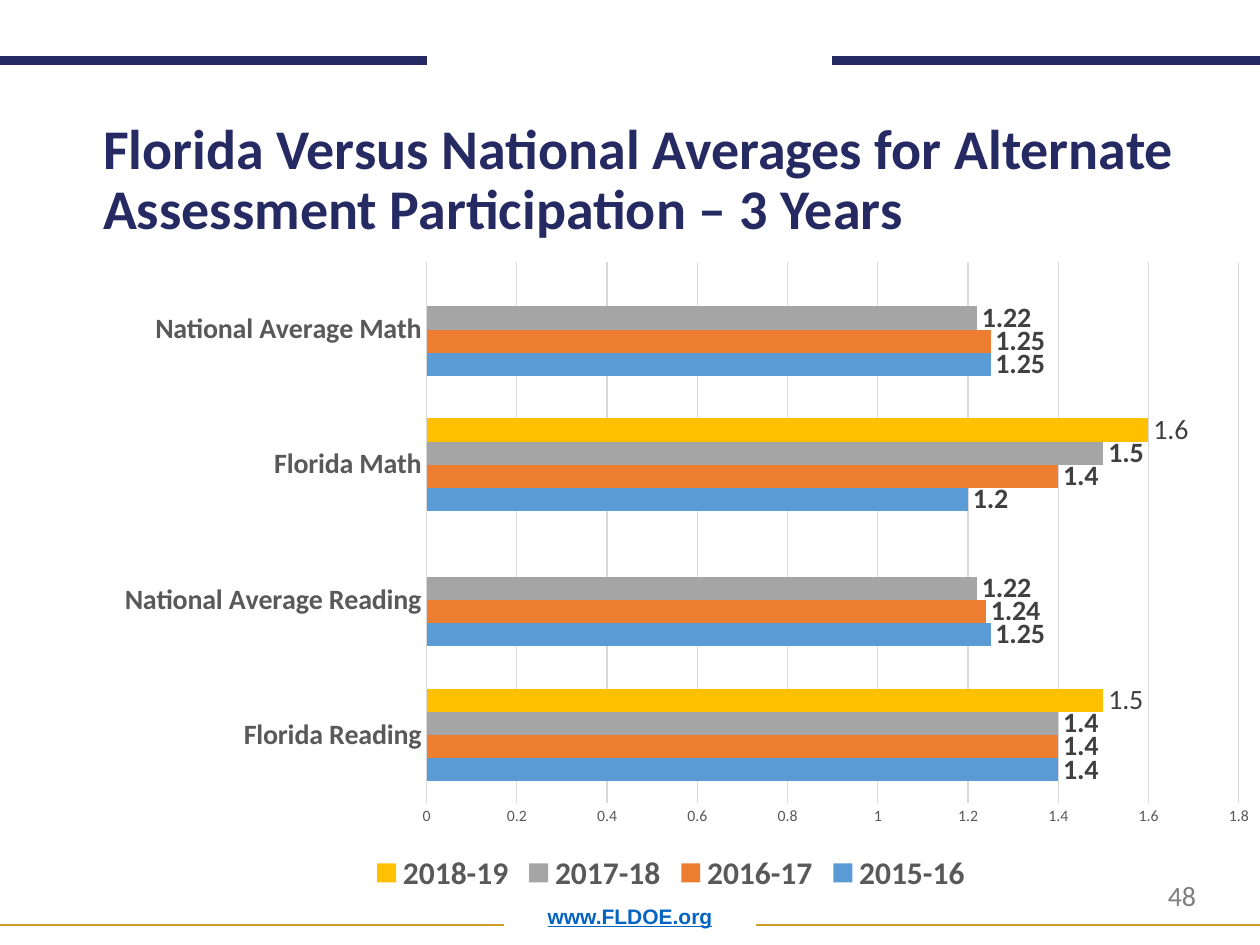
from dataclasses import dataclass
from typing import Any, Optional

import lxml.etree
import pptx
import pptx.chart.data
import pptx.dml.color
import pptx.enum.chart
import pptx.enum.dml
import pptx.enum.shapes
import pptx.enum.text
import pptx.oxml
import pptx.oxml.ns
import pptx.util

Inches = pptx.util.Inches
COLORS = {
    "navy": "262A63", "gold": "CD9D2C", "link": "0563C1", "page": "7F7F7F",
    "axis": "595959", "grid": "D9D9D9", "label": "404040", "black": "000000",
    "blue": "5B9BD5", "orange": "ED7D31", "gray": "A5A5A5", "yellow": "FFC000",
}
CATEGORIES = ["Florida Reading", "National Average Reading", "Florida Math", "National Average Math"]
PLOT_FRAME = {"x": 0.293, "y": 0.029, "w": 0.688, "h": 0.825}


@dataclass
class Rule:
    left: float
    right: float
    top: float
    color: str
    weight: float


@dataclass
class Label:
    text: str
    left: float
    top: float
    width: float
    height: float
    font: dict[str, Any]
    paragraph: dict[str, Any]
    anchor: Any = pptx.enum.text.MSO_ANCHOR.TOP


@dataclass
class YearSeries:
    name: str
    values: list[Optional[float]]
    color: str
    bold_labels: bool = True


RULES = [
    Rule(0, 3.39, 0.48, "navy", 5),
    Rule(6.6, 10, 0.48, "navy", 5),
    Rule(0, 4, 7.34, "gold", 1),
    Rule(6, 10, 7.34, "gold", 1),
]
LABELS = [
    Label("www.FLDOE.org", 0.69, 7, 8.62, 0.42,
          {"name": "Arial", "size": 12, "color": "link", "bold": True, "underline": True},
          {"alignment": pptx.enum.text.PP_ALIGN.CENTER, "line_spacing": 0.9},
          pptx.enum.text.MSO_ANCHOR.BOTTOM),
    Label("48", 9.17, 6.92, 0.73, 0.37, {"size": 16, "color": "page"}, {}),
    Label("Florida Versus National Averages for Alternate Assessment Participation – 3 Years",
          0.72, 1.1, 9.34, 0.87, {"size": 32, "color": "navy", "bold": True},
          {"line_spacing": 0.9}, pptx.enum.text.MSO_ANCHOR.BOTTOM),
]
YEARS = [
    YearSeries("2015-16", [1.4, 1.25, 1.2, 1.25], "blue"),
    YearSeries("2016-17", [1.4, 1.24, 1.4, 1.25], "orange"),
    YearSeries("2017-18", [1.4, 1.22, 1.5, 1.22], "gray"),
    YearSeries("2018-19", [1.5, None, 1.6, None], "yellow", False),
]


def rgb(color: str) -> pptx.dml.color.RGBColor:
    return pptx.dml.color.RGBColor.from_string(COLORS[color])


def apply_format(target: Any, values: dict[str, Any]) -> None:
    for name, value in values.items():
        setattr(target, name, value)


def format_font(font: Any, size: float, color: str, name: str = "Calibri", **values: Any) -> None:
    apply_format(font, {"size": pptx.util.Pt(size), "name": name, **values})
    font.color.rgb = rgb(color)


def format_line(line: Any, color: str, weight: float) -> None:
    line.color.rgb = rgb(color)
    line.width = pptx.util.Pt(weight)


def draw_rule(slide: Any, rule: Rule) -> None:
    connector = slide.shapes.add_connector(
        pptx.enum.shapes.MSO_CONNECTOR.STRAIGHT,
        Inches(rule.left), Inches(rule.top), Inches(rule.right), Inches(rule.top))
    format_line(connector.line, rule.color, rule.weight)
    lxml.etree.SubElement(connector._element.spPr, pptx.oxml.ns.qn("a:effectLst"))


def draw_label(slide: Any, label: Label) -> None:
    shape = slide.shapes.add_textbox(
        Inches(label.left), Inches(label.top), Inches(label.width), Inches(label.height))
    apply_format(shape.text_frame, {"word_wrap": True, "vertical_anchor": label.anchor})
    paragraph = shape.text_frame.paragraphs[0]
    apply_format(paragraph, label.paragraph)
    run = paragraph.add_run()
    run.text = label.text
    format_font(run.font, **label.font)


def place_plot(chart: Any) -> None:
    plot_area = chart._chartSpace.chart.plotArea
    for old_layout in plot_area.findall(pptx.oxml.ns.qn("c:layout")):
        plot_area.remove(old_layout)
    settings = {"layoutTarget": "inner", "xMode": "edge", "yMode": "edge", **PLOT_FRAME}
    entries = "".join(f'<c:{name} val="{value}"/>' for name, value in settings.items())
    plot_area.insert(0, pptx.oxml.parse_xml(
        f'<c:layout {pptx.oxml.ns.nsdecls("c")}><c:manualLayout>{entries}</c:manualLayout></c:layout>'))


def format_axes(chart: Any) -> None:
    no_tick = pptx.enum.chart.XL_TICK_MARK.NONE
    ticks = {"major_tick_mark": no_tick, "minor_tick_mark": no_tick}
    category_axis, value_axis = chart.category_axis, chart.value_axis
    apply_format(category_axis, ticks)
    format_font(category_axis.tick_labels.font, 16, "axis", bold=True)
    format_line(category_axis.format.line, "grid", 0.75)
    apply_format(value_axis, {**ticks, "minimum_scale": 0, "maximum_scale": 1.8,
                              "major_unit": 0.2, "has_major_gridlines": True})
    format_font(value_axis.tick_labels.font, 9, "axis", bold=False)
    value_axis.format.line.fill.background()
    format_line(value_axis.major_gridlines.format.line, "grid", 0.75)


def draw_chart(slide: Any, years: list[YearSeries]) -> None:
    data = pptx.chart.data.CategoryChartData()
    data.categories = CATEGORIES
    for year in years:
        data.add_series(year.name, year.values)
    chart = slide.shapes.add_chart(
        pptx.enum.chart.XL_CHART_TYPE.BAR_CLUSTERED,
        Inches(0.64), Inches(1.93), Inches(9.37), Inches(5.2), data).chart
    apply_format(chart, {"has_title": False, "has_legend": True})
    format_font(chart.font, 10, "black")
    apply_format(chart.legend, {"position": pptx.enum.chart.XL_LEGEND_POSITION.BOTTOM,
                                "include_in_layout": False})
    format_font(chart.legend.font, 18, "axis", bold=True)
    plot = chart.plots[0]
    apply_format(plot, {"gap_width": 182, "vary_by_categories": False})
    for series, year in zip(plot.series, years):
        series.format.fill.solid()
        series.format.fill.fore_color.rgb = rgb(year.color)
        apply_format(series.data_labels, {
            "show_value": True, "position": pptx.enum.chart.XL_LABEL_POSITION.OUTSIDE_END})
        format_font(series.data_labels.font, 16, "label", bold=year.bold_labels)
    format_axes(chart)
    place_plot(chart)


def main() -> None:
    presentation = pptx.Presentation()
    apply_format(presentation, {"slide_width": Inches(10), "slide_height": Inches(7.5)})
    slide = presentation.slides.add_slide(presentation.slide_layouts[6])
    for rule in RULES:
        draw_rule(slide, rule)
    for label in LABELS:
        draw_label(slide, label)
    draw_chart(slide, YEARS)
    presentation.save("out.pptx")


if __name__ == "__main__":
    main()
